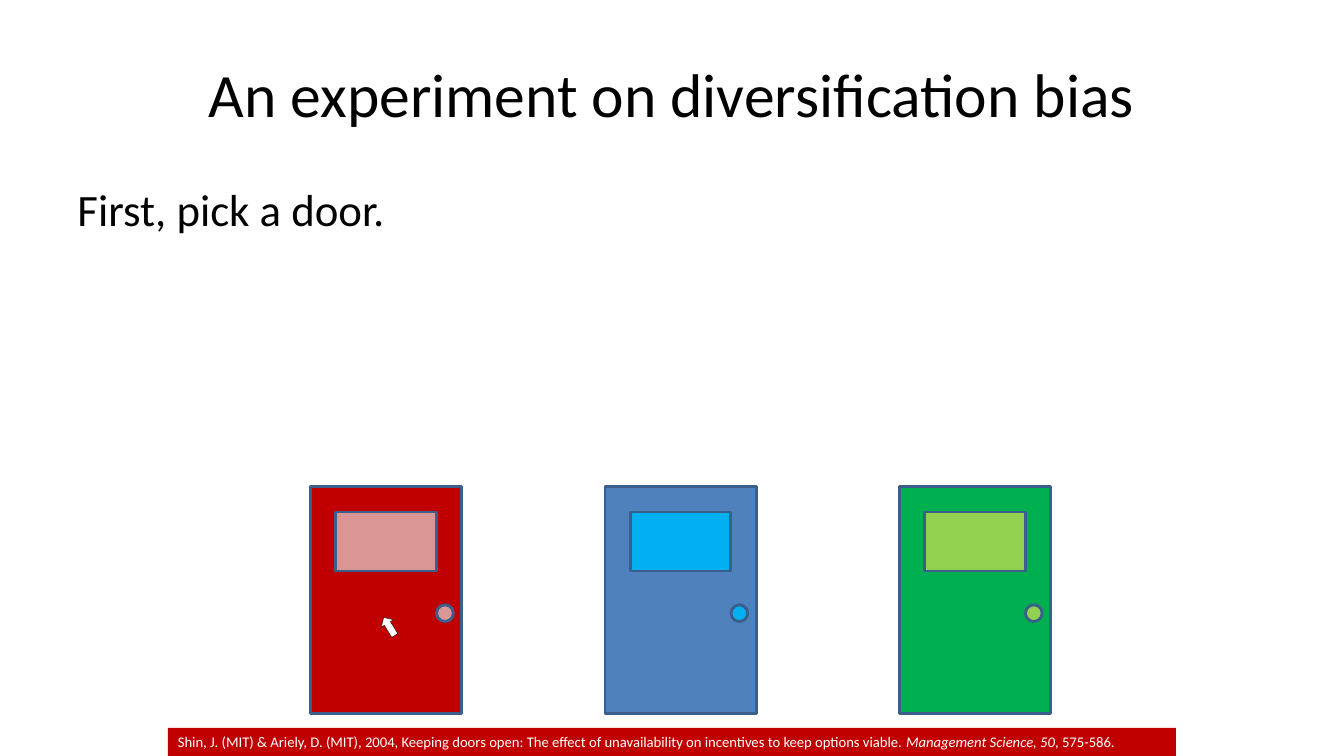
import dataclasses
import pptx
import pptx.util
import pptx.dml.color
import pptx.enum.shapes
import pptx.enum.text

Inches = pptx.util.Inches
Pt = pptx.util.Pt
Kind = pptx.enum.shapes.MSO_SHAPE
Align = pptx.enum.text.PP_ALIGN
Anchor = pptx.enum.text.MSO_ANCHOR


@dataclasses.dataclass(frozen=True)
class Theme:
    font: str = "Calibri"
    ink: str = "000000"
    paper: str = "FFFFFF"
    edge: str = "3A5F8C"
    red: str = "C00000"
    doors: tuple = (
        ("C00000", "D99694"),
        ("4F81BD", "00B0F0"),
        ("00B050", "92D050"),
    )
    title: float = 44
    body: float = 32
    note: float = 10.5


THEME = Theme()
WIDE, HIGH = 13.33, 7.5
SIDE = 0.67
DOOR = (1.5, 2.25)
STEP = 2.92


def color(code):
    return pptx.dml.color.RGBColor.from_string(code)


def place(shape, box):
    shape.left, shape.top, shape.width, shape.height = map(Inches, box)


def write(par, text, size, code, slant=None):
    run = par.add_run()
    run.text = text
    run.font.name = THEME.font
    run.font.size = Pt(size)
    run.font.color.rgb = color(code)
    run.font.italic = slant


def draw(slide, kind, box, fill, edge=None, width=2):
    shape = slide.shapes.add_shape(kind, *map(Inches, box))
    shape.shadow.inherit = False
    shape.fill.solid()
    shape.fill.fore_color.rgb = color(fill)
    if edge:
        shape.line.color.rgb = color(edge)
        shape.line.width = Pt(width)
    else:
        shape.line.fill.background()
    return shape


def head(slide, box):
    title = slide.shapes.title
    place(title, box)
    frame = title.text_frame
    frame.word_wrap = True
    frame.vertical_anchor = Anchor.MIDDLE
    par = frame.paragraphs[0]
    par.alignment = Align.CENTER
    write(par, "An experiment on diversification bias", THEME.title, THEME.ink)


def body(slide, box):
    frame = slide.shapes.add_textbox(*map(Inches, box)).text_frame
    frame.word_wrap = True
    write(frame.paragraphs[0], "First, pick a door.", THEME.body, THEME.ink)


def door(slide, box, panel, glass):
    left, top, wide, high = box
    pane = (left + wide / 6, top + high / 9, wide * 2 / 3, high * 0.26)
    knob = (left + wide * 5 / 6, top + high * 0.52, wide / 9, wide / 9)
    draw(slide, Kind.RECTANGLE, box, panel, THEME.edge)
    draw(slide, Kind.RECTANGLE, pane, glass, THEME.edge)
    draw(slide, Kind.OVAL, knob, glass, THEME.edge)


def doors(slide, box):
    left, top, wide, high = box
    for col, (panel, glass) in enumerate(THEME.doors):
        door(slide, (left + col * STEP, top, wide, high), panel, glass)


def cite(slide, box):
    frame = draw(slide, Kind.RECTANGLE, box, THEME.red).text_frame
    frame.word_wrap = True
    frame.vertical_anchor = Anchor.MIDDLE
    par = frame.paragraphs[0]
    par.alignment = Align.LEFT
    parts = (
        ("Shin, J. (MIT) & Ariely, D. (MIT), 2004, Keeping doors open: "
         "The effect of unavailability on incentives to keep options viable. ", False),
        ("Management Science, 50", True),
        (", 575-586.", False),
    )
    for text, slant in parts:
        write(par, text, THEME.note, THEME.paper, slant)


def cursor(slide, box):
    arrow = draw(slide, Kind.DOWN_ARROW, box, THEME.paper, THEME.ink, 0.25)
    arrow.rotation = 148.6


def main():
    deck = pptx.Presentation()
    deck.slide_width, deck.slide_height = Inches(WIDE), Inches(HIGH)
    slide = deck.slides.add_slide(deck.slide_layouts.get_by_name("Title Only"))
    span = WIDE - 2 * SIDE
    head(slide, (SIDE, 0.3, span, 1.25))
    body(slide, (SIDE, 1.75, span, 4.95))
    doors(slide, (3.08, 4.83, *DOOR))
    cite(slide, (WIDE / 8, HIGH - 0.28, WIDE * 0.75, 0.28))
    cursor(slide, (3.79, 6.11, 0.14, 0.21))
    deck.save("out.pptx")


if __name__ == "__main__":
    main()
